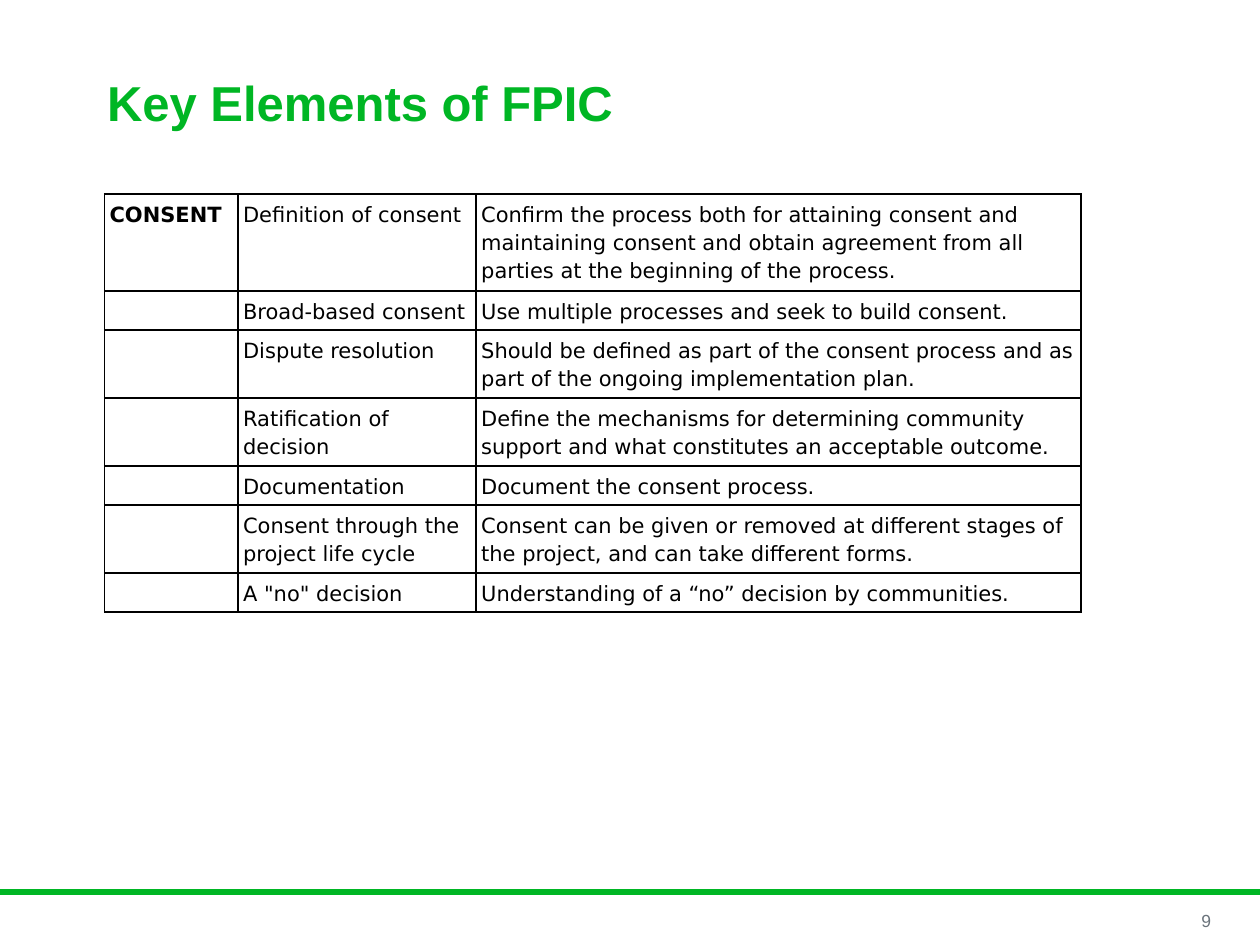
from dataclasses import dataclass

from lxml import etree
from pptx import Presentation
from pptx.dml.color import RGBColor
from pptx.enum.text import MSO_ANCHOR, PP_ALIGN
from pptx.oxml.ns import qn
from pptx.util import Inches, Pt

MIDDLE = MSO_ANCHOR.MIDDLE
LEFT, RIGHT = PP_ALIGN.LEFT, PP_ALIGN.RIGHT


@dataclass(frozen=True)
class Theme:
    green: str = "00B624"
    grey: str = "6A737B"
    black: str = "000000"
    head_font: str = "Arial"
    table_font: str = "DejaVu Sans"
    title_size: int = 28
    table_size: int = 12
    number_size: int = 10


THEME = Theme()
TITLE = "Key Elements of FPIC"
PAGE = "9"
ROWS = [
    ("CONSENT", "Definition of consent",
     "Confirm the process both for attaining consent and maintaining consent "
     "and obtain agreement from all parties at the beginning of the process."),
    ("", "Broad-based consent", "Use multiple processes and seek to build consent."),
    ("", "Dispute resolution",
     "Should be defined as part of the consent process and as part of the "
     "ongoing implementation plan."),
    ("", "Ratification of decision",
     "Define the mechanisms for determining community support and what "
     "constitutes an acceptable outcome."),
    ("", "Documentation", "Document the consent process."),
    ("", "Consent through the project life cycle",
     "Consent can be given or removed at different stages of the project, "
     "and can take different forms."),
    ("", 'A "no" decision', "Understanding of a “no” decision by communities."),
]
ROW_LINES = [3, 1, 2, 2, 1, 2, 1]
COL_WIDTHS = [1.06, 1.89, 4.8]
TABLE_LEFT, TABLE_TOP = 0.83, 1.54
INSET, LINE_HEIGHT = 0.04, 0.23
SLIDE_W, SLIDE_H = 10, 7.5
RULE_Y = 7.08


def add_run(p, text, font, size, color, bold=False):
    r = p.add_run()
    r.text = text
    r.font.name = font
    r.font.size = Pt(size)
    r.font.bold = bold
    r.font.color.rgb = RGBColor.from_string(color)


def add_borders(cell):
    tcPr = cell._tc.get_or_add_tcPr()
    for side in ("lnL", "lnR", "lnT", "lnB"):
        ln = etree.SubElement(tcPr, qn(f"a:{side}"), w=str(Pt(1)))
        fill = etree.SubElement(ln, qn("a:solidFill"))
        etree.SubElement(fill, qn("a:srgbClr"), val=THEME.black)


def add_title(s):
    sp = s.shapes.title
    sp.left, sp.top, sp.width, sp.height = map(Inches, (0.75, 0.42, 7.42, 0.85))
    tf = sp.text_frame
    tf.vertical_anchor = MIDDLE
    p = tf.paragraphs[0]
    p.alignment = LEFT
    p.line_spacing = 0.85
    add_run(p, TITLE, THEME.head_font, THEME.title_size, THEME.green, True)


def add_consent_table(s):
    heights = [n * LINE_HEIGHT + 2 * INSET for n in ROW_LINES]
    box = map(Inches, (TABLE_LEFT, TABLE_TOP, sum(COL_WIDTHS), sum(heights)))
    table = s.shapes.add_table(len(ROWS), len(COL_WIDTHS), *box).table
    table.first_row = table.horz_banding = False
    for col, width in zip(table.columns, COL_WIDTHS):
        col.width = Inches(width)
    for row, height, texts in zip(table.rows, heights, ROWS):
        row.height = Inches(height)
        for i, (cell, text) in enumerate(zip(row.cells, texts)):
            cell.margin_left = cell.margin_right = Inches(INSET)
            cell.margin_top = cell.margin_bottom = Inches(INSET)
            add_borders(cell)
            cell.fill.background()
            p = cell.text_frame.paragraphs[0]
            p.line_spacing = 1.15
            if text:
                add_run(p, text, THEME.table_font, THEME.table_size, THEME.black, i == 0)
            else:
                etree.SubElement(p._p, qn("a:endParaRPr"), sz=str(THEME.table_size * 100))


def add_footer(s):
    rule = s.shapes.add_connector(1, 0, Inches(RULE_Y), Inches(SLIDE_W), Inches(RULE_Y))
    rule.line.color.rgb = RGBColor.from_string(THEME.green)
    rule.line.width = Pt(3.5)
    etree.SubElement(rule._element.spPr, qn("a:effectLst"))
    tf = s.shapes.add_textbox(*map(Inches, (9, 7.19, 0.71, 0.23))).text_frame
    tf.word_wrap = True
    tf.vertical_anchor = MIDDLE
    p = tf.paragraphs[0]
    p.alignment = RIGHT
    add_run(p, PAGE, THEME.head_font, THEME.number_size, THEME.grey)


def main():
    prs = Presentation()
    prs.slide_width, prs.slide_height = Inches(SLIDE_W), Inches(SLIDE_H)
    s = prs.slides.add_slide(prs.slide_layouts[5])
    add_title(s)
    add_consent_table(s)
    add_footer(s)
    prs.save("out.pptx")


if __name__ == "__main__":
    main()
